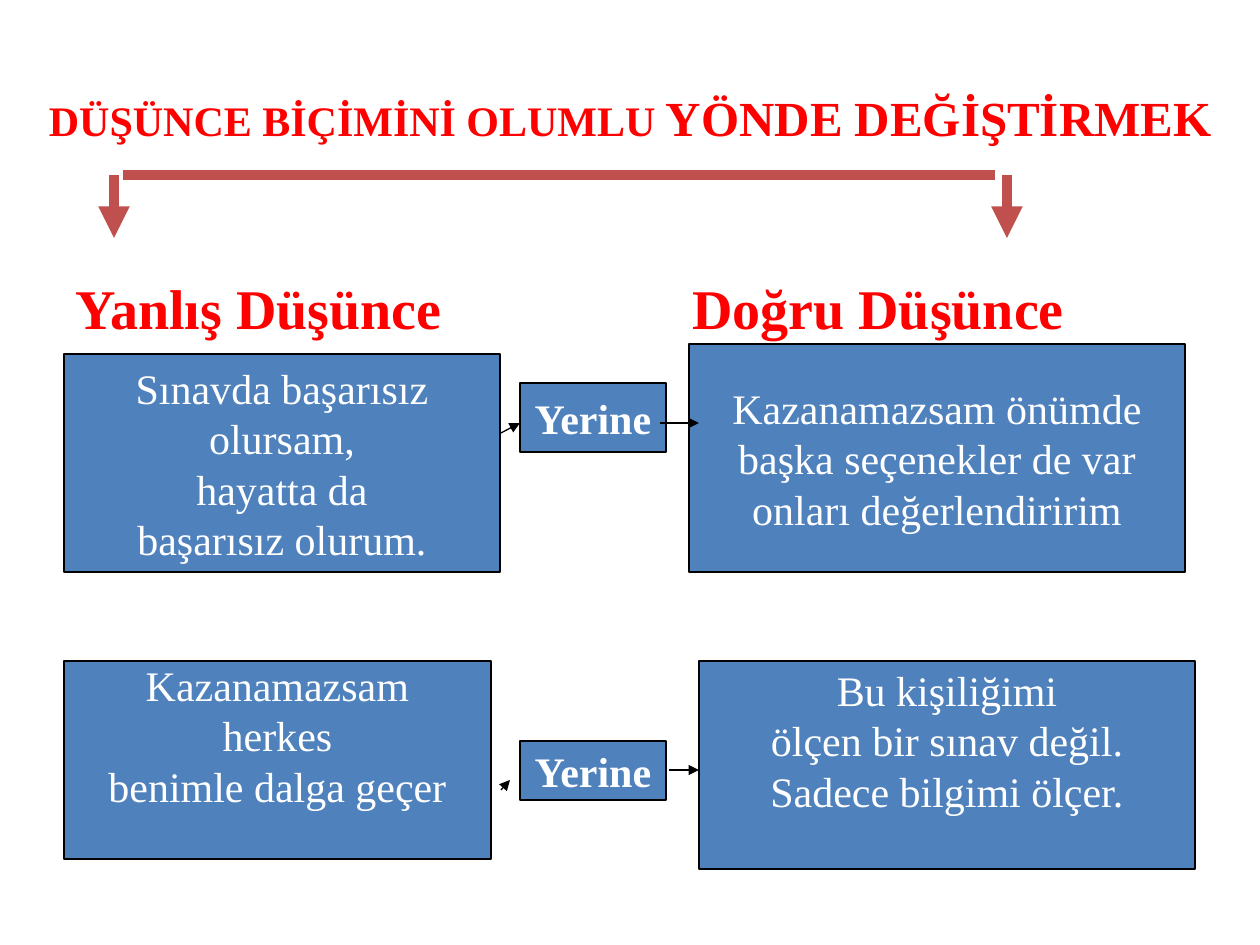
import pptx
import pptx.util
import pptx.dml.color
import pptx.enum.shapes
import pptx.enum.text
import pptx.oxml.ns
import lxml.etree

FONT = "Times New Roman"
RED, WHITE, BLACK, BLUE, BRICK = "FF0000", "FFFFFF", "000000", "4F81BD", "C0504D"
LINE = 50

TITLE = [("DÜŞÜNCE BİÇİMİNİ OLUMLU", 24), (" YÖNDE DEĞİŞTİRMEK", 28)]
HEADS = [("Yanlış Düşünce", 76), ("Doğru Düşünce", 692)]
BOXES = [
    ((64, 354, 436, 218), False, 0,
     ["Sınavda başarısız", "olursam,", "hayatta da", "başarısız olurum."]),
    ((689, 344, 496, 228), False, 0,
     ["Kazanamazsam önümde", "başka seçenekler de var", "onları değerlendiririm"]),
    ((64, 661, 427, 198), False, LINE,
     ["Kazanamazsam", "herkes", "benimle dalga geçer"]),
    ((699, 661, 496, 208), False, LINE,
     ["Bu kişiliğimi", "ölçen bir sınav değil.", "Sadece bilgimi ölçer."]),
    ((520, 383, 146, 69), True, 0, ["Yerine"]),
    ((520, 741, 146, 59), True, 0, ["Yerine"]),
]
LINES = [
    ((123, 175, 995, 175), BRICK, 6, False),
    ((1007, 175, 1007, 238), BRICK, 6, True),
    ((114, 175, 114, 238), BRICK, 6, True),
    ((501, 433, 520, 423), BLACK, 0.75, True),
    ((501, 790, 510, 780), BLACK, 0.75, True),
    ((660, 423, 699, 423), BLACK, 0.75, True),
    ((669, 770, 699, 770), BLACK, 0.75, True),
]


def px(n):
    return pptx.util.Emu(round(n * 914400 / 126))


def rgb(code):
    return pptx.dml.color.RGBColor.from_string(code)


def style(font, size, color, bold):
    font.name = FONT
    font.size = pptx.util.Pt(size)
    font.bold = bold
    font.color.rgb = rgb(color)


def add_title(slide):
    title = slide.shapes.title
    title.left, title.top, title.width, title.height = map(px, (0, 38, 1260, 157))
    frame = title.text_frame
    frame.vertical_anchor = pptx.enum.text.MSO_ANCHOR.MIDDLE
    para = frame.paragraphs[0]
    para.alignment = pptx.enum.text.PP_ALIGN.CENTER
    for text, size in TITLE:
        run = para.add_run()
        run.text = text
        style(run.font, size, RED, True)


def add_head(slide, text, left):
    frame = slide.shapes.add_textbox(px(left), px(274), px(420), px(64)).text_frame
    frame.word_wrap = True
    frame.margin_left = frame.margin_right = frame.margin_top = frame.margin_bottom = 0
    frame.text = text
    style(frame.paragraphs[0].font, 32, RED, True)


def add_box(slide, place, bold, lift, rows):
    kind = pptx.enum.shapes.MSO_SHAPE.RECTANGLE
    box = slide.shapes.add_shape(kind, *map(px, place))
    box.shadow.inherit = False
    box.fill.solid()
    box.fill.fore_color.rgb = rgb(BLUE)
    box.line.color.rgb = rgb(BLACK)
    box.line.width = pptx.util.Pt(0.75)
    frame = box.text_frame
    frame.word_wrap = False
    frame.vertical_anchor = pptx.enum.text.MSO_ANCHOR.MIDDLE
    frame.margin_top = px(6)
    frame.margin_bottom = px(6 + lift)
    frame.text = "\n".join(rows)
    for para in frame.paragraphs:
        para.alignment = pptx.enum.text.PP_ALIGN.CENTER
        style(para.font, 24, WHITE, bold)


def add_line(slide, ends, color, width, arrow):
    kind = pptx.enum.shapes.MSO_CONNECTOR.STRAIGHT
    line = slide.shapes.add_connector(kind, *map(px, ends))
    line.line.color.rgb = rgb(color)
    line.line.width = pptx.util.Pt(width)
    name = pptx.oxml.ns.qn
    props = line.element.find(name("p:spPr"))
    if arrow:
        tail = lxml.etree.SubElement(props.find(name("a:ln")), name("a:tailEnd"))
        tail.set("type", "triangle")
    lxml.etree.SubElement(props, name("a:effectLst"))


def main():
    deck = pptx.Presentation()
    deck.slide_width, deck.slide_height = px(1260), px(945)
    slide = deck.slides.add_slide(deck.slide_layouts[5])
    add_title(slide)
    for head in HEADS:
        add_head(slide, *head)
    for box in BOXES:
        add_box(slide, *box)
    for line in LINES:
        add_line(slide, *line)
    deck.save("out.pptx")


if __name__ == "__main__":
    main()
